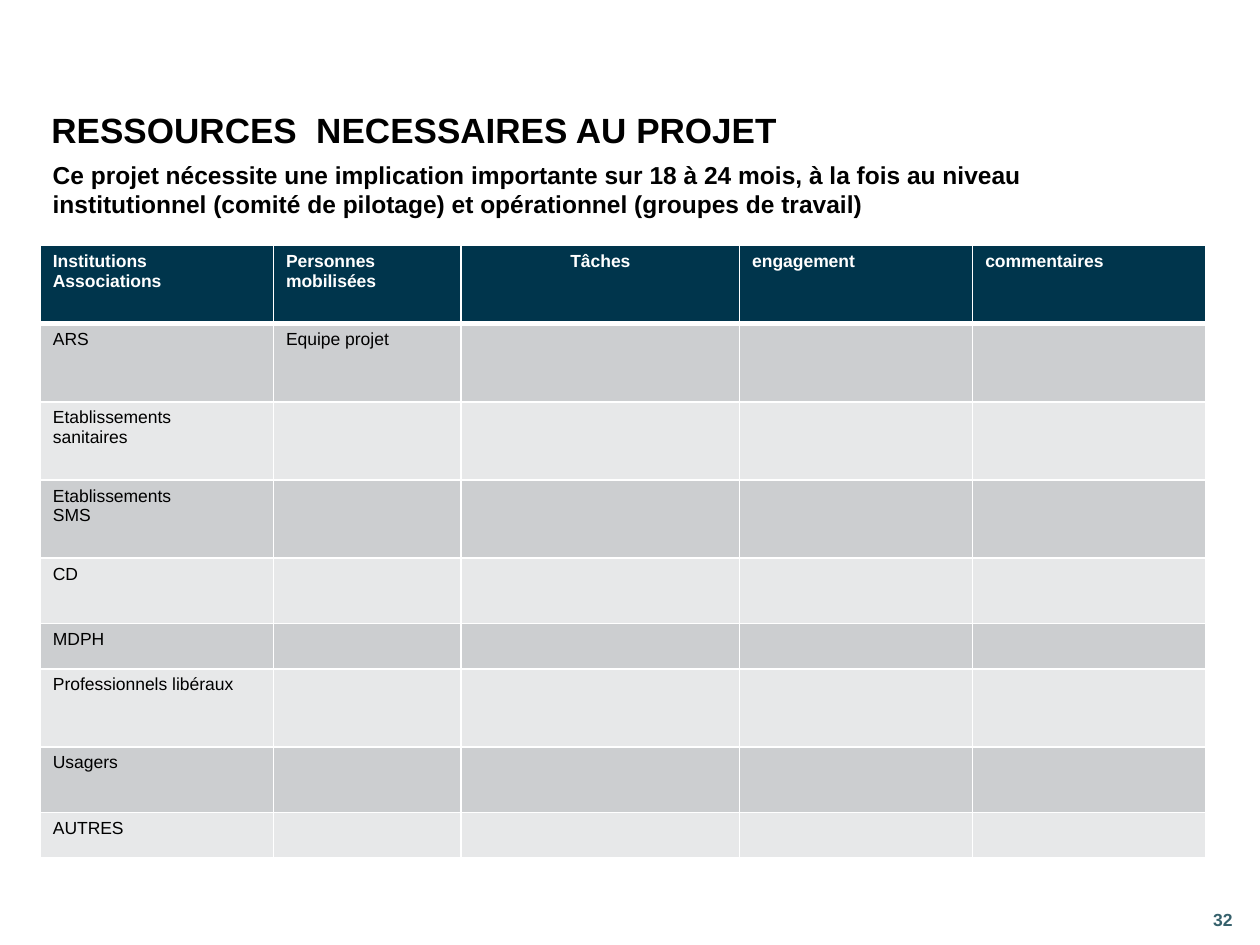
import pptx
import pptx.dml.color
import pptx.enum.text
import pptx.oxml
import pptx.oxml.ns
import pptx.util
from pptx.util import Inches

RGBColor = pptx.dml.color.RGBColor
PP_ALIGN = pptx.enum.text.PP_ALIGN
ANCHOR = pptx.enum.text.MSO_ANCHOR

BLACK = RGBColor(0x00, 0x00, 0x00)
WHITE = RGBColor(0xFF, 0xFF, 0xFF)
NAVY = RGBColor(0x00, 0x35, 0x4C)
TEAL = RGBColor(0x36, 0x61, 0x6C)
BANDS = (RGBColor(0xCC, 0xCE, 0xD0), RGBColor(0xE7, 0xE8, 0xE9))
FONT = "Arial"
TABLE_SIZE = 10

COLUMN_WIDTHS = (1.85, 1.49, 2.21, 1.85, 1.85)
ROW_HEIGHTS = (0.62, 0.62, 0.62, 0.62, 0.52, 0.36, 0.62, 0.52, 0.36)
HEADINGS = ("Institutions\nAssociations", "Personnes mobilisées", "Tâches",
            "engagement", "commentaires")
INSTITUTIONS = ("ARS", "Etablissements\nsanitaires", "Etablissements\nSMS", "CD",
                "MDPH", "Professionnels libéraux", "Usagers", "AUTRES")
MOBILISED = {"ARS": "Equipe projet"}


def add_run(paragraph, text, size, color, bold):
    run = paragraph.add_run()
    run.text = text
    run.font.name = FONT
    run.font.size = pptx.util.Pt(size)
    run.font.bold = bold
    run.font.color.rgb = color


def add_text(slide, box, text, size, color=BLACK, anchor=ANCHOR.TOP, wrap=True):
    frame = slide.shapes.add_textbox(*map(Inches, box)).text_frame
    frame.word_wrap = wrap
    frame.vertical_anchor = anchor
    add_run(frame.paragraphs[0], text, size, color, True)


def set_borders(cell, top, bottom):
    """Draw white cell borders; top and bottom widths are in points."""
    properties = cell._tc.get_or_add_tcPr()
    for side, width in (("L", 1), ("R", 1), ("T", top), ("B", bottom)):
        properties.append(pptx.oxml.parse_xml(
            f'<a:ln{side} {pptx.oxml.ns.nsdecls("a")} w="{pptx.util.Pt(width)}">'
            f'<a:solidFill><a:srgbClr val="{WHITE}"/></a:solidFill></a:ln{side}>'))


def fill_cell(cell, text, fill, color, bold):
    cell.fill.solid()
    cell.fill.fore_color.rgb = fill
    frame = cell.text_frame
    if not text:
        # An empty cell needs a small end mark so that its row stays low.
        frame.paragraphs[0]._p.append(pptx.oxml.parse_xml(
            f'<a:endParaRPr {pptx.oxml.ns.nsdecls("a")} sz="{TABLE_SIZE * 100}"/>'))
        return
    for index, line in enumerate(text.split("\n")):
        paragraph = frame.add_paragraph() if index else frame.paragraphs[0]
        add_run(paragraph, line, TABLE_SIZE, color, bold)


def add_resources_table(slide):
    rows = [HEADINGS] + [(name, MOBILISED.get(name, ""), "", "", "")
                         for name in INSTITUTIONS]
    table = slide.shapes.add_table(
        len(rows), len(COLUMN_WIDTHS), Inches(0.32), Inches(1.95),
        Inches(sum(COLUMN_WIDTHS)), Inches(sum(ROW_HEIGHTS))).table
    for column, width in zip(table.columns, COLUMN_WIDTHS):
        column.width = Inches(width)
    for r, (texts, height) in enumerate(zip(rows, ROW_HEIGHTS)):
        table.rows[r].height = Inches(height)
        header = r == 0
        fill = NAVY if header else BANDS[(r - 1) % 2]
        for c, text in enumerate(texts):
            cell = table.cell(r, c)
            set_borders(cell, top=3 if r == 1 else 1, bottom=3 if header else 1)
            fill_cell(cell, text, fill, WHITE if header else BLACK, header)
    tasks_heading = table.cell(0, HEADINGS.index("Tâches"))
    tasks_heading.text_frame.paragraphs[0].alignment = PP_ALIGN.CENTER


def main():
    presentation = pptx.Presentation()
    presentation.slide_width = Inches(10)
    presentation.slide_height = Inches(7.5)
    slide = presentation.slides.add_slide(presentation.slide_layouts[6])

    add_text(slide, (9.53, 7.1, 0.47, 0.4), "32", 10, TEAL, ANCHOR.MIDDLE)
    add_text(slide, (0.31, 0.78, 9.55, 0.49), "RESSOURCES  NECESSAIRES AU PROJET",
             20, anchor=ANCHOR.MIDDLE, wrap=False)
    add_resources_table(slide)
    add_text(slide, (0.32, 1.22, 8.8, 0.57),
             "Ce projet nécessite une implication importante sur 18 à 24 mois, "
             "à la fois au niveau institutionnel (comité de pilotage) et "
             "opérationnel (groupes de travail)", 14)
    presentation.save("out.pptx")


if __name__ == "__main__":
    main()
